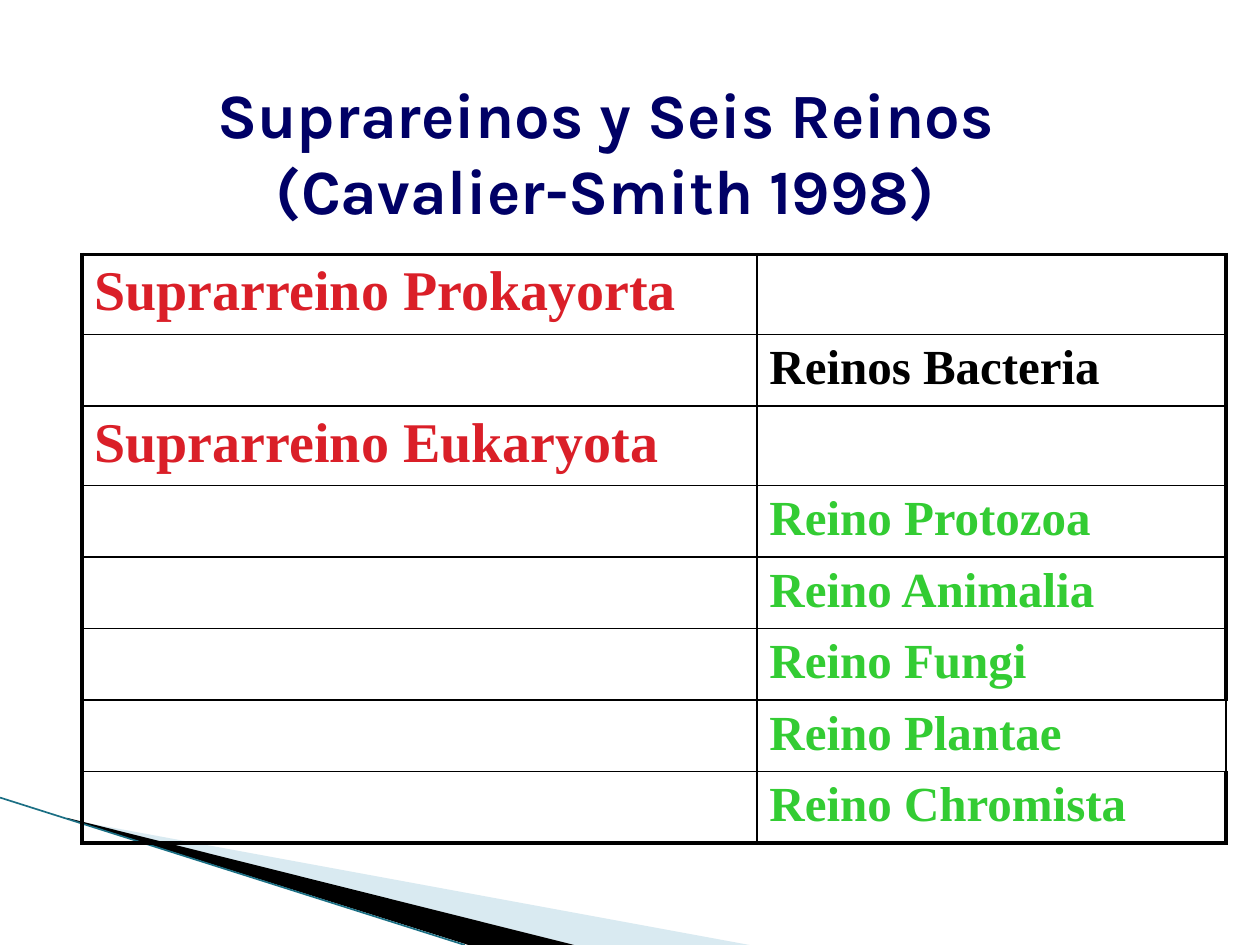
from lxml.etree import SubElement
from pptx import Presentation
from pptx.dml.color import RGBColor as RGB
from pptx.enum.shapes import MSO_CONNECTOR as LINK
from pptx.enum.text import MSO_ANCHOR as ANCHOR, PP_ALIGN as ALIGN
from pptx.oxml.ns import qn
from pptx.util import Inches, Pt

NAVY = RGB(0x00, 0x00, 0x66)
RED = RGB(0xDA, 0x1F, 0x28)
GREEN = RGB(0x33, 0xCC, 0x33)
BLACK = RGB(0x00, 0x00, 0x00)
SKY = RGB(0xA0, 0xCB, 0xDC)
TEAL = RGB(0x1B, 0x6F, 0x84)

WIDE, HIGH = Inches(10), Inches(7.5)
THIN, THICK = 1, 2.25

# Column, text, colour and size of the only filled cell in each row
RANKS = [
    (0, "Suprarreino Prokayorta", RED, 32),
    (1, "Reinos Bacteria", BLACK, 28),
    (0, "Suprarreino Eukaryota", RED, 32),
    (1, "Reino Protozoa", GREEN, 28),
    (1, "Reino Animalia", GREEN, 28),
    (1, "Reino Fungi", GREEN, 28),
    (1, "Reino Plantae", GREEN, 28),
    (1, "Reino Chromista", GREEN, 28),
]


def across(share):
    """Length of a percentage of the slide's width."""
    return round(WIDE * share / 100)


def down(share):
    """Length of a percentage of the slide's height."""
    return round(HIGH * share / 100)


def place(box):
    """Turn a box of percentages into left, top, width, height."""
    x, y, w, h = box
    return across(x), down(y), across(w), down(h)


def write(frame, text, font="Times New Roman", size=28, color=BLACK,
          bold=True, align=ALIGN.LEFT):
    par = frame.paragraphs[0]
    par.alignment = align
    run = par.add_run()
    run.text = text
    run.font.name = font
    run.font.size = Pt(size)
    run.font.bold = bold
    run.font.color.rgb = color


def wedge(slide, box, points, color, alpha=100):
    """Draw a filled outline whose points are percentages of the box."""
    x, y, w, h = place(box)
    spots = [(x + w * px / 100, y + h * py / 100) for px, py in points]
    pen = slide.shapes.build_freeform(*spots[0])
    pen.add_line_segments(spots[1:], close=True)
    shape = pen.convert_to_shape()
    shape.shadow.inherit = False
    shape.line.fill.background()
    shape.fill.solid()
    shape.fill.fore_color.rgb = color
    if alpha < 100:
        tint = shape.fill._xPr.find(".//" + qn("a:srgbClr"))
        SubElement(tint, qn("a:alpha"), val=str(alpha * 1000))


def swoosh(slide, box):
    """Draw the corner sweep: pale wedge, black wedge and edge line."""
    x, y, w, h = place(box)
    wedge(slide, box, [(9.2, 15), (100, 100), (76.6, 100), (9.2, 14.5)], SKY, 40)
    wedge(slide, box, [(8.9, 13.7), (76.6, 100), (62.5, 100), (9.1, 14.5)], BLACK)
    edge = slide.shapes.add_connector(
        LINK.STRAIGHT, x, y, x + round(w * 0.62), y + h)
    edge.line.color.rgb = TEAL
    edge.line.width = Pt(0.95)
    SubElement(edge._element.spPr, qn("a:effectLst"))


def title(slide, box):
    frame = slide.shapes.add_textbox(*place(box)).text_frame
    frame.word_wrap = True
    frame.vertical_anchor = ANCHOR.TOP
    frame.margin_top = down(1.33)
    write(frame, "Suprareinos y Seis Reinos (Cavalier-Smith 1998)",
          font="Karla", size=36, color=NAVY, align=ALIGN.CENTER)


def border(cell, **sides):
    """Rule the L, R, T and B sides with the given widths in points."""
    props = cell._tc.get_or_add_tcPr()
    for side, width in sides.items():
        line = SubElement(props, qn("a:ln" + side), w=str(Pt(width)))
        fill = SubElement(line, qn("a:solidFill"))
        SubElement(fill, qn("a:srgbClr"), val=str(BLACK))


def kingdoms(slide, box):
    """Build the table: supra-kingdoms at left, kingdoms at right."""
    x, y, w, h = place(box)
    count = len(RANKS)
    table = slide.shapes.add_table(count, 2, x, y, w, h).table
    table.first_row = table.horz_banding = False
    table.columns[0].width = round(w * 0.59)
    table.columns[1].width = w - table.columns[0].width
    for r, row in enumerate(table.rows):
        row.height = down(8.4 if r == 0 else 7.41)
        for c, cell in enumerate(row.cells):
            plain = RANKS[r][1] == "Reino Plantae"
            border(cell,
                   L=THICK if c == 0 else THIN,
                   R=THICK if c == 1 and not plain else THIN,
                   T=THICK if r == 0 else THIN,
                   B=THICK if r == count - 1 else THIN)
            cell.fill.background()
        col, text, color, size = RANKS[r]
        write(table.cell(r, col).text_frame, text, size=size, color=color)


def main():
    deck = Presentation()
    deck.slide_width, deck.slide_height = WIDE, HIGH
    slide = deck.slides.add_slide(deck.slide_layouts[6])
    swoosh(slide, (0, 84.4, 59.5, 15.6))
    title(slide, (6.7, 6.67, 82.7, 20.27))
    kingdoms(slide, (6.5, 26.93, 90.8, 62.27))
    deck.save("out.pptx")


if __name__ == "__main__":
    main()
